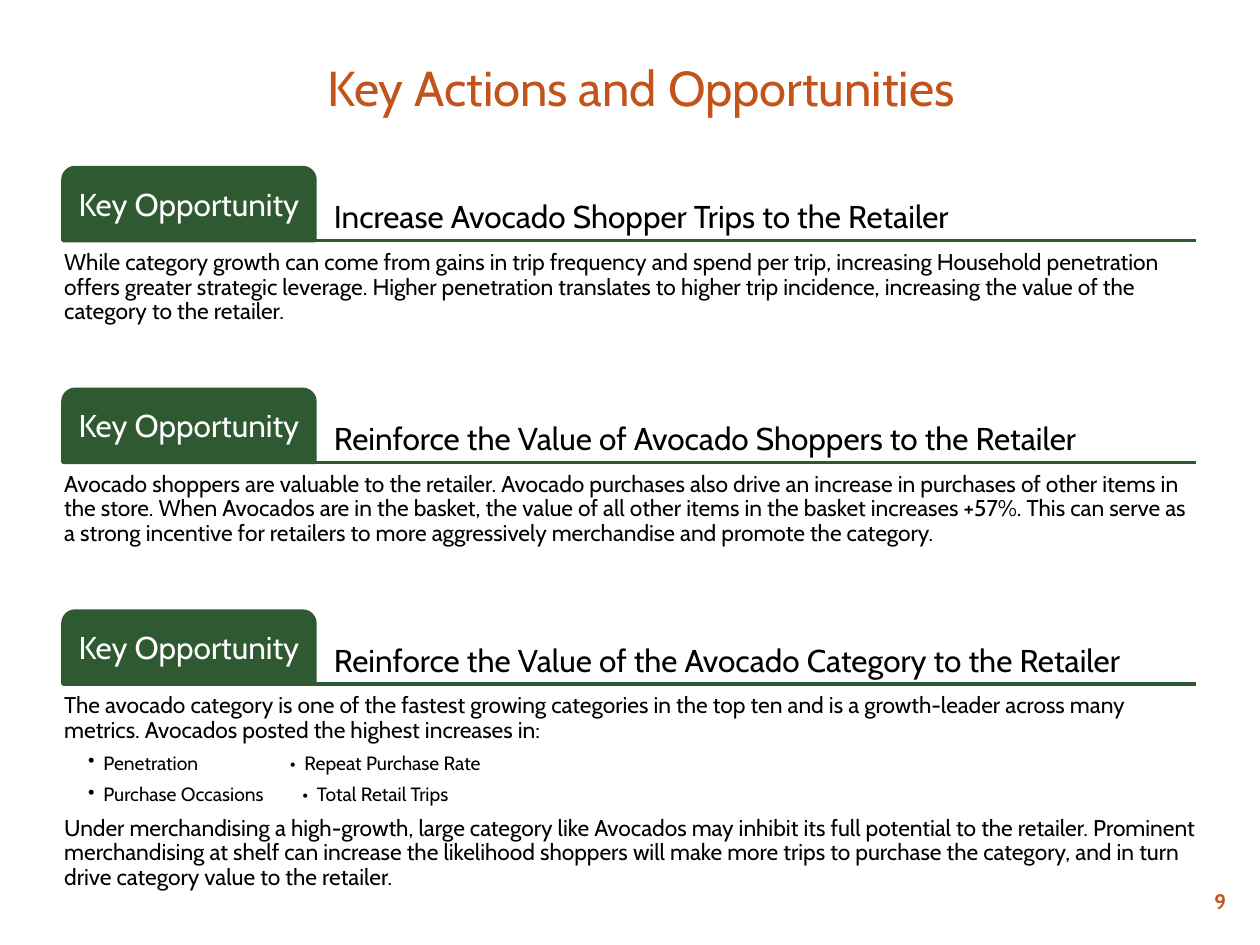
from lxml import etree
from pptx import Presentation
from pptx.dml.color import RGBColor
from pptx.enum.shapes import MSO_CONNECTOR, MSO_SHAPE
from pptx.enum.text import MSO_ANCHOR, PP_ALIGN
from pptx.oxml.ns import qn
from pptx.util import Inches, Pt

ORANGE = RGBColor(0xC2, 0x53, 0x1A)
GREEN = RGBColor(0x2F, 0x59, 0x31)
BLACK = RGBColor(0, 0, 0)
WHITE = RGBColor(0xFF, 0xFF, 0xFF)

LEFT, WIDTH = 0.5, 8.99
TAB_W, TAB_H = 2, 0.58
FIRST_TOP, PITCH = 1.33, 1.76

# Each section: heading, then body paragraphs; a tuple is a bullet row
# holding its text and the position of its second column.
SECTIONS = [
    ("Increase Avocado Shopper Trips to the Retailer", [
        "While category growth can come from gains in trip frequency and spend per trip, "
        "increasing Household penetration offers greater strategic leverage. Higher "
        "penetration translates to higher trip incidence, increasing the value of the "
        "category to the retailer.",
    ]),
    ("Reinforce the Value of Avocado Shoppers to the Retailer", [
        "Avocado shoppers are valuable to the retailer. Avocado purchases also drive an "
        "increase in purchases of other items in the store. When Avocados are in the "
        "basket, the value of all other items in the basket increases +57%. This can "
        "serve as a strong incentive for retailers to more aggressively merchandise and "
        "promote the category.",
    ]),
    ("Reinforce the Value of the Avocado Category to the Retailer", [
        "The avocado category is one of the fastest growing categories in the top ten and "
        "is a growth-leader across many metrics. Avocados posted the highest increases in:",
        ("Penetration\t•  Repeat Purchase Rate", 1.79),
        ("Purchase Occasions\t•  Total Retail Trips", 1.89),
        "Under merchandising a high-growth, large category like Avocados may inhibit its "
        "full potential to the retailer. Prominent merchandising at shelf can increase the "
        "likelihood shoppers will make more trips to purchase the category, and in turn "
        "drive category value to the retailer.",
    ]),
]


def format_paragraph(p, size, color, align=PP_ALIGN.LEFT, spacing=0.9):
    p.alignment = align
    p.line_spacing = spacing
    for r in p.runs:
        r.font.name = "Cabin"
        r.font.size = Pt(size)
        r.font.color.rgb = color


def set_frame(tf, anchor, left, top, right, bottom):
    """Wrap the text, anchor it and set its insets in inches."""
    tf.word_wrap = True
    tf.vertical_anchor = anchor
    tf.margin_left, tf.margin_top = Inches(left), Inches(top)
    tf.margin_right, tf.margin_bottom = Inches(right), Inches(bottom)


prs = Presentation()
prs.slide_width, prs.slide_height = Inches(10), Inches(7.5)
s = prs.slides.add_slide(prs.slide_layouts[5])

title = s.shapes.title
title.left, title.top = Inches(2.5), Inches(0.3)
title.width, title.height = Inches(7), Inches(0.78)
title.text_frame.text = "Key Actions and Opportunities"
title.text_frame.vertical_anchor = MSO_ANCHOR.MIDDLE
format_paragraph(title.text_frame.paragraphs[0], 28, ORANGE, spacing=1.0)

for i, (heading, body) in enumerate(SECTIONS):
    top = FIRST_TOP + i * PITCH
    rule_y = top + TAB_H

    rule = s.shapes.add_connector(MSO_CONNECTOR.STRAIGHT, Inches(LEFT), Inches(rule_y),
                                  Inches(LEFT + WIDTH), Inches(rule_y))
    rule.line.color.rgb = GREEN
    rule.line.width = Pt(2)
    etree.SubElement(rule._element.spPr, qn("a:effectLst"))

    tab = s.shapes.add_shape(MSO_SHAPE.ROUND_2_SAME_RECTANGLE, Inches(LEFT), Inches(top),
                             Inches(TAB_W), Inches(TAB_H))
    tab.shadow.inherit = False
    tab.adjustments[0] = 0.167
    tab.fill.solid()
    tab.fill.fore_color.rgb = GREEN
    tab.line.color.rgb = GREEN
    tab.line.width = Pt(2)
    tab.text_frame.text = "Key Opportunity"
    set_frame(tab.text_frame, MSO_ANCHOR.MIDDLE, 0.04, 0.04, 0.04, 0.04)
    format_paragraph(tab.text_frame.paragraphs[0], 18, WHITE, PP_ALIGN.CENTER)

    head = s.shapes.add_textbox(Inches(LEFT + TAB_W), Inches(top), Inches(6.65), Inches(TAB_H))
    head.text_frame.text = heading
    set_frame(head.text_frame, MSO_ANCHOR.BOTTOM, 0.15, 0.04, 0.04, 0.04)
    format_paragraph(head.text_frame.paragraphs[0], 18, BLACK)

    box = s.shapes.add_textbox(Inches(LEFT), Inches(rule_y), Inches(WIDTH), Inches(1.15))
    tf = box.text_frame
    set_frame(tf, MSO_ANCHOR.TOP, 0.01, 0.08, 0.01, 0.01)
    for j, item in enumerate(body):
        p = tf.paragraphs[0] if j == 0 else tf.add_paragraph()
        if isinstance(item, tuple):
            p.text, column = item
            format_paragraph(p, 11, BLACK)
            pPr = p._p.get_or_add_pPr()
            pPr.set("marL", str(Inches(0.31)))
            pPr.set("indent", str(-Inches(0.12)))
            p.space_after = Pt(6)
            etree.SubElement(pPr, qn("a:buChar"), char="•")
            tabs = etree.SubElement(pPr, qn("a:tabLst"))
            etree.SubElement(tabs, qn("a:tab"), pos=str(Inches(column)), algn="l")
        else:
            p.text = item
            format_paragraph(p, 13, BLACK)
            p.space_after = Pt(6)

number = s.shapes.add_textbox(Inches(9.33), Inches(7), Inches(0.5), Inches(0.25))
number.text_frame.text = "9"
number.text_frame.word_wrap = True
p = number.text_frame.paragraphs[0]
format_paragraph(p, 12, ORANGE, PP_ALIGN.RIGHT, 1.0)
p.runs[0].font.bold = True

prs.save("out.pptx")
